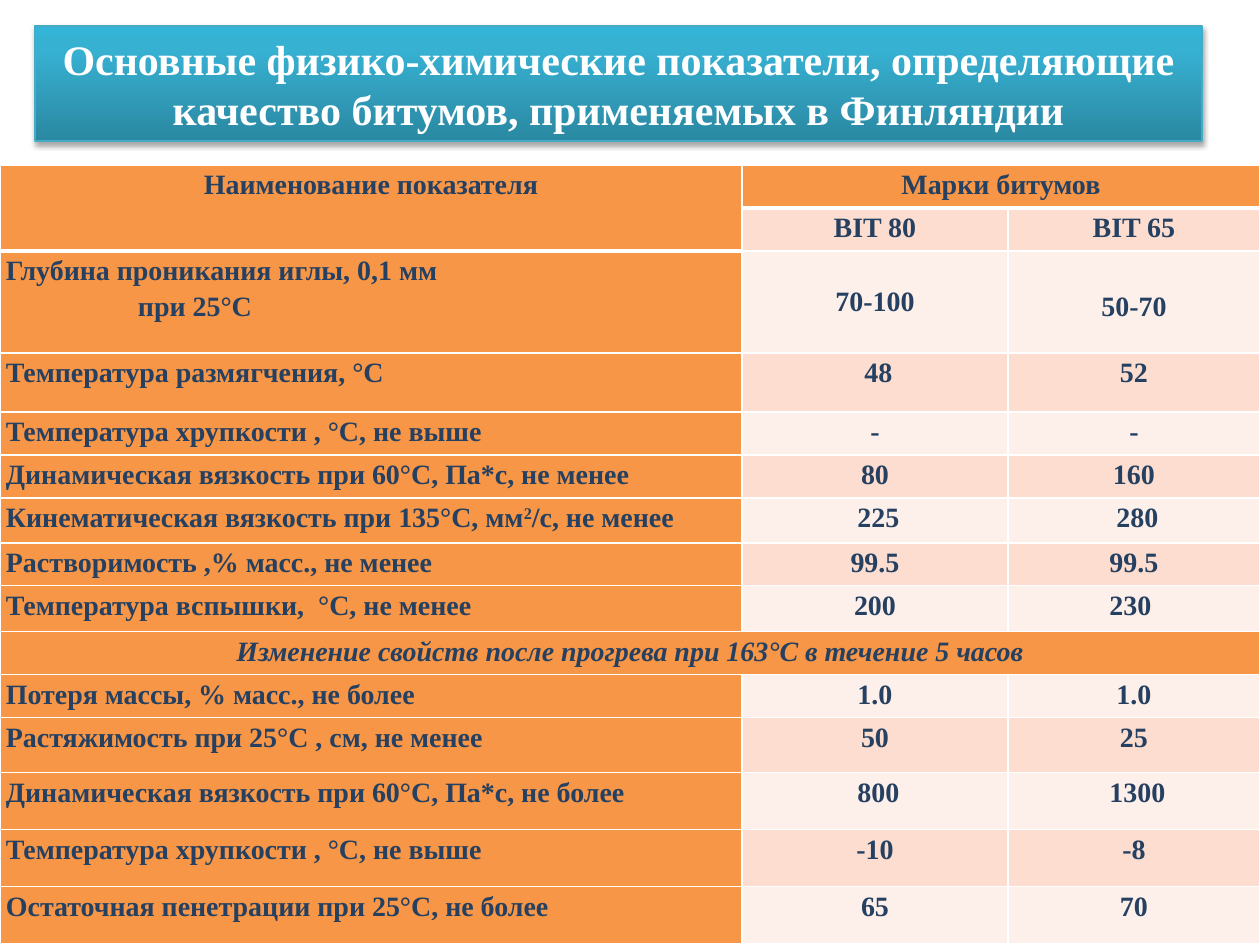
from lxml.etree import SubElement
from pptx import Presentation
from pptx.dml.color import RGBColor
from pptx.enum.shapes import MSO_SHAPE
from pptx.enum.text import MSO_ANCHOR, PP_ALIGN
from pptx.oxml import parse_xml
from pptx.oxml.ns import nsdecls, qn
from pptx.util import Emu, Pt

PIXEL = 914400 // 126
FONT = "Times New Roman"
ORANGE, PEACH, CREAM = "F79646", "FCDDCF", "FDEFE9"
NAVY, WHITE = "254061", "FFFFFF"
TITLE = "Основные физико-химические показатели, определяющие качество битумов, применяемых в Финляндии"
COLUMN_WIDTHS = [742, 266, 252]
ROWS = [
    (43, ["Наименование показателя", "Марки битумов", ""]),
    (43, ["", "ВIT 80", "ВIT 65"]),
    (102, ["Глубина проникания иглы, 0,1 мм\nпри 25°С", "70-100", "50-70"]),
    (59, ["Температура размягчения, °С", " 48", " 52 "]),
    (43, ["Температура хрупкости , °С, не выше", "-", "-"]),
    (43, ["Динамическая вязкость при 60°С, Па*с, не менее", "80", "160"]),
    (45, ["Кинематическая вязкость при 135°С, мм^2^/с, не менее", " 225", " 280"]),
    (43, ["Растворимость ,% масс., не менее", "99.5", "99.5"]),
    (46, ["Температура вспышки,  °С, не менее", "200", "230 "]),
    (43, ["Изменение свойств после прогрева при 163°С в течение 5 часов", "", ""]),
    (43, ["Потеря массы, % масс., не более", "1.0", "1.0"]),
    (55, ["Растяжимость при 25°С , см, не менее", "50", "25"]),
    (57, ["Динамическая вязкость при 60°С, Па*с, не более", " 800", " 1300"]),
    (57, ["Температура хрупкости , °С, не выше", "-10", "-8"]),
    (57, ["Остаточная пенетрации при 25°С, не более", "65", "70"]),
]
SECTION_ROW = 9
MERGES = [((0, 0), (1, 0)), ((0, 1), (0, 2)), ((SECTION_ROW, 0), (SECTION_ROW, 2))]
TOP_MARGINS = {(2, 1): 31, (2, 2): 36}
SECOND_LINE_INDENT = 132


def px(length):
    """Turn pixels into EMU."""
    return Emu(length * PIXEL)


def color(value):
    """Turn a hex string into a colour."""
    return RGBColor.from_string(value)


def add_run(paragraph, text, size, hex_color, italic=False):
    """Add one bold run and return it."""
    run = paragraph.add_run()
    run.text = text
    font = run.font
    font.name, font.size, font.bold, font.italic = FONT, Pt(size), True, italic
    font.color.rgb = color(hex_color)
    return run


def add_title(slide, left, top, width, height):
    """Draw the gradient banner with the slide title."""
    shape = slide.shapes.add_shape(MSO_SHAPE.RECTANGLE, px(left), px(top), px(width), px(height))
    shape.line.color.rgb = color("46AAC5")
    shape.line.width = Pt(0.75)
    stops = "".join(
        f'<a:gs pos="{position}000"><a:srgbClr val="{value}"/></a:gs>'
        for position, value in [(0, "2A88A2"), (80, "37B1D2"), (100, "34B4D6")]
    )
    properties = shape.element.spPr
    properties.find(qn("a:prstGeom")).addnext(parse_xml(
        f'<a:gradFill {nsdecls("a")} rotWithShape="1"><a:gsLst>{stops}</a:gsLst>'
        '<a:lin ang="16200000" scaled="0"/></a:gradFill>'
    ))
    properties.append(parse_xml(
        f'<a:effectLst {nsdecls("a")}><a:outerShdw blurRad="40000" dist="23000" dir="5400000" '
        'rotWithShape="0"><a:srgbClr val="000000"><a:alpha val="35000"/></a:srgbClr>'
        '</a:outerShdw></a:effectLst>'
    ))
    frame = shape.text_frame
    frame.word_wrap = True
    frame.vertical_anchor = MSO_ANCHOR.MIDDLE
    paragraph = frame.paragraphs[0]
    paragraph.alignment = PP_ALIGN.CENTER
    add_run(paragraph, TITLE, 24, WHITE)


def style_cell(cell, row, column):
    """Set the borders, fill and margins of one cell."""
    below_header = row == 1 or (row, column) == (2, 0)
    above_body = row == 0 or (row, column) == (1, 0)
    widths = {"L": 1, "R": 1, "T": 3 if below_header else 1, "B": 3 if above_body else 1}
    properties = cell._tc.get_or_add_tcPr()
    for side, width in widths.items():
        line = SubElement(properties, qn(f"a:ln{side}"), w=str(Pt(width)))
        SubElement(SubElement(line, qn("a:solidFill")), qn("a:srgbClr"), val=WHITE)
    if column == 0 or row in (0, SECTION_ROW):
        fill = ORANGE
    else:
        fill = PEACH if row % 2 else CREAM
    cell.fill.solid()
    cell.fill.fore_color.rgb = color(fill)
    cell.margin_left = cell.margin_right = px(6)
    cell.margin_top = px(TOP_MARGINS.get((row, column), 0))
    cell.margin_bottom = 0


def fill_cell(cell, text, centered, italic):
    """Write the lines of a cell, with text between carets raised."""
    frame = cell.text_frame
    for index, line in enumerate(text.split("\n")):
        paragraph = frame.add_paragraph() if index else frame.paragraphs[0]
        paragraph.alignment = PP_ALIGN.CENTER if centered else PP_ALIGN.LEFT
        paragraph.line_spacing = 1.15
        if index:
            paragraph._p.get_or_add_pPr().set("marL", str(px(SECOND_LINE_INDENT)))
        for part, piece in enumerate(line.split("^")):
            run = add_run(paragraph, piece, 16, NAVY, italic)
            if part % 2:
                run._r.get_or_add_rPr().set("baseline", "30000")


def add_indicator_table(slide, left, top, width, height):
    """Draw the table of bitumen indicators."""
    table = slide.shapes.add_table(
        len(ROWS), len(COLUMN_WIDTHS), px(left), px(top), px(width), px(height)
    ).table
    for column, column_width in zip(table.columns, COLUMN_WIDTHS):
        column.width = px(column_width)
    for row, (row_height, texts) in enumerate(ROWS):
        table.rows[row].height = px(row_height)
        for column, text in enumerate(texts):
            cell = table.cell(row, column)
            style_cell(cell, row, column)
            if text:
                centered = column > 0 or row in (0, SECTION_ROW)
                fill_cell(cell, text, centered, row == SECTION_ROW)
    for first, last in MERGES:
        table.cell(*first).merge(table.cell(*last))


def main():
    """Build and save the presentation."""
    presentation = Presentation()
    presentation.slide_width, presentation.slide_height = px(1260), px(945)
    slide = presentation.slides.add_slide(presentation.slide_layouts[6])
    add_indicator_table(slide, 0, 165, sum(COLUMN_WIDTHS), sum(height for height, _ in ROWS))
    add_title(slide, 35, 26, 1167, 115)
    presentation.save("out.pptx")


if __name__ == "__main__":
    main()
